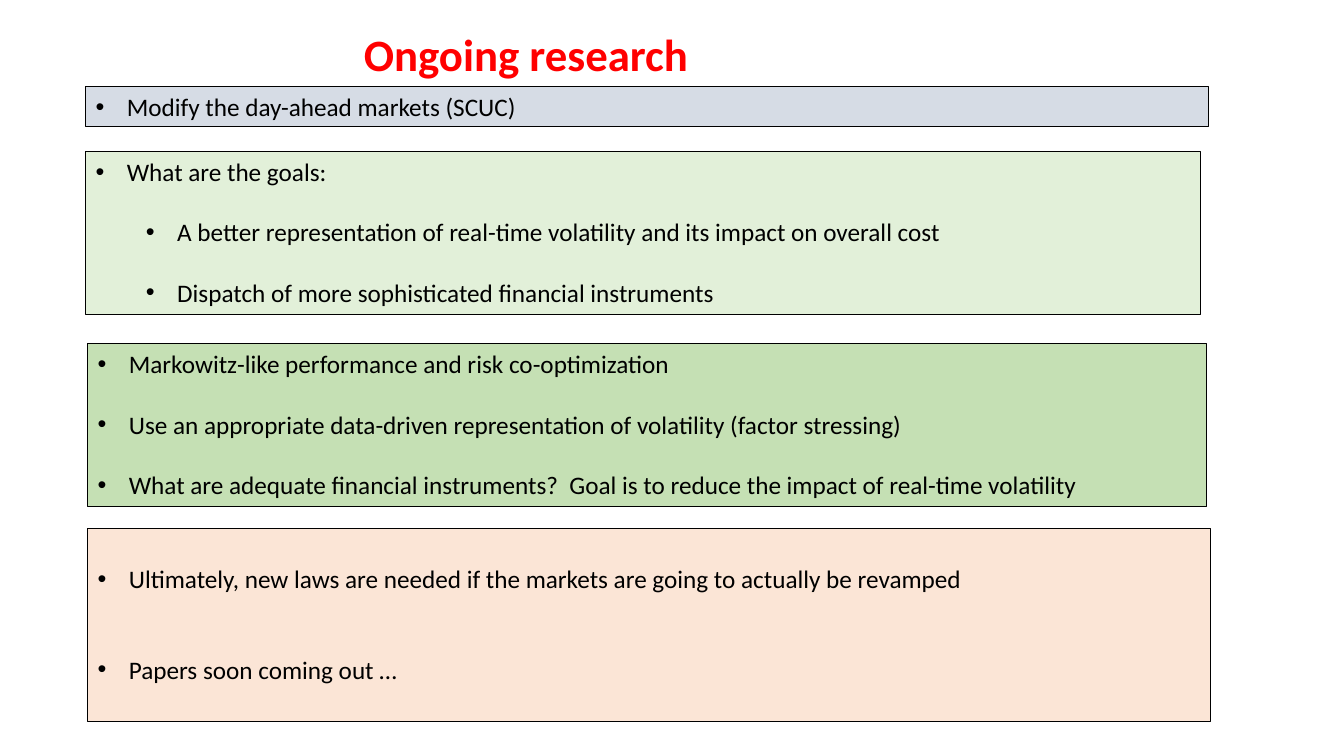
from pptx import Presentation
from pptx.dml.color import RGBColor
from pptx.enum.shapes import MSO_SHAPE
from pptx.enum.text import MSO_ANCHOR, PP_ALIGN
from pptx.util import Inches, Pt
from lxml import etree

RECT = MSO_SHAPE.RECTANGLE
TOP = MSO_ANCHOR.TOP
LEFT = PP_ALIGN.LEFT
FONT = "Calibri"
BLACK = "000000"
LINE = 21.5  # height of one text line, in points

TITLE = "Ongoing research"

# place (left, top, width, height), fill, top inset, items (level, lines skipped before, text)
PANELS = [
    ((0.85, 0.86, 11.14, 0.4), "D6DCE5", 0.05, [
        (0, 0, "Modify the day-ahead markets (SCUC)"),
    ]),
    ((0.85, 1.5, 11.06, 1.62), "E2F0D9", 0.05, [
        (0, 0, "What are the goals:"),
        (1, 1, "A better representation of real-time volatility and its impact on overall cost"),
        (1, 1, "Dispatch of more sophisticated financial instruments"),
    ]),
    ((0.87, 3.41, 11.1, 1.62), "C5E0B4", 0.05, [
        (0, 0, "Markowitz-like performance and risk co-optimization"),
        (0, 1, "Use an appropriate data-driven representation of volatility (factor stressing)"),
        (0, 1, "What are adequate financial instruments?  Goal is to reduce the impact of real-time volatility"),
    ]),
    ((0.87, 5.24, 11.14, 1.92), "FBE5D6", 0.35, [
        (0, 0, "Ultimately, new laws are needed if the markets are going to actually be revamped"),
        (0, 2, "Papers soon coming out …"),
    ]),
]


def paint(part, color):
    """Give a fill a solid colour."""
    part.solid()
    part.fore_color.rgb = RGBColor.from_string(color)


def style(para, size, color, bold=False):
    font = para.font
    font.name, font.size, font.bold = FONT, Pt(size), bold
    paint(font.fill, color)


def bullet(para, level):
    """Add a hanging bullet, indented by level."""
    props = para._p.get_or_add_pPr()
    props.set("marL", str(Inches(0.31 + 0.5 * level)))
    props.set("indent", str(Inches(-0.31)))
    space = props.nsmap["a"]
    face = etree.SubElement(props, f"{{{space}}}buFont")
    face.set("typeface", "Arial")
    mark = etree.SubElement(props, f"{{{space}}}buChar")
    mark.set("char", "•")


def panel(slide, place, fill, inset, items):
    box = slide.shapes.add_shape(RECT, *map(Inches, place))
    box.shadow.inherit = False
    paint(box.fill, fill)
    paint(box.line.fill, BLACK)
    box.line.width = Pt(0.75)
    frame = box.text_frame
    frame.word_wrap = True
    frame.vertical_anchor = TOP
    frame.margin_top = Inches(inset)
    for i, (level, skip, text) in enumerate(items):
        para = frame.add_paragraph() if i else frame.paragraphs[0]
        para.text = text
        para.level = level
        para.alignment = LEFT
        bullet(para, level)
        if skip:
            para.space_before = Pt(LINE * skip)
        style(para, 18, BLACK)


def main():
    deck = Presentation()
    deck.slide_width, deck.slide_height = Inches(13.33), Inches(7.5)
    slide = deck.slides.add_slide(deck.slide_layouts[6])

    head = slide.shapes.add_textbox(*map(Inches, (3.51, 0.22, 5.32, 0.64)))
    head.text_frame.word_wrap = True
    para = head.text_frame.paragraphs[0]
    para.text = TITLE
    style(para, 32, "FF0000", bold=True)

    for spec in PANELS:
        panel(slide, *spec)
    deck.save("out.pptx")


if __name__ == "__main__":
    main()
